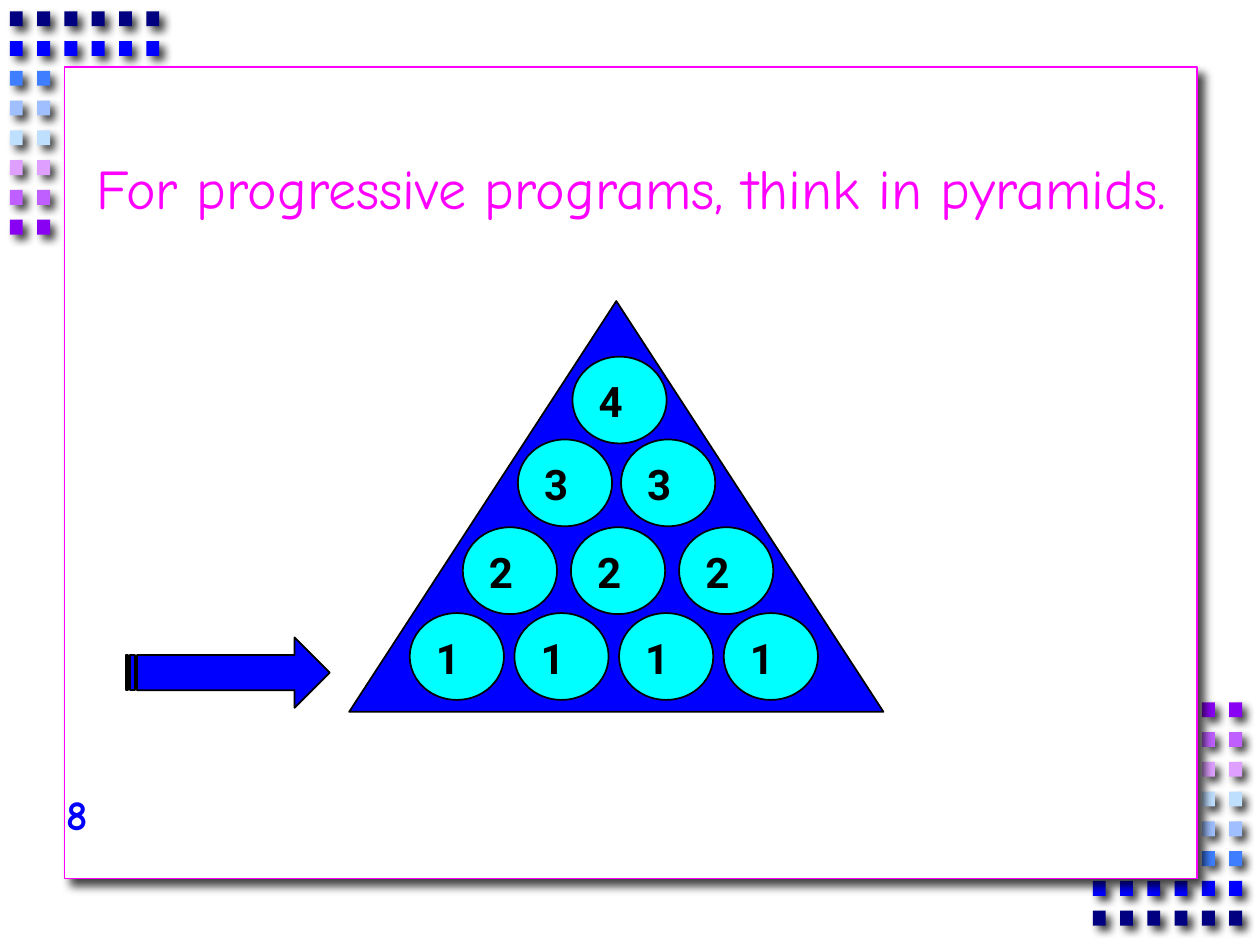
from lxml import etree
from pptx import Presentation
from pptx import util as u
from pptx.dml.color import RGBColor
from pptx.enum import shapes, text
from pptx.oxml.ns import qn

TITLE_FONT = "Comic Neue"
NUMBER_FONT = "Roboto"
BLUE, MAGENTA, CYAN, BLACK, WHITE = "0000FF", "FF00FF", "00FFFF", "000000", "FFFFFF"
DOT_COLOURS = ["000080", BLUE, "3F7FFF", "9FBFFF", "BFDFFF", "DF9FFF", "BF5FFF", "8901F3"]
DOT_COLUMNS = 6
DOT_PITCH = (0.55, 0.6)
DOT_SIZE = (0.26, 0.3)


def colour(hex_string):
    return RGBColor.from_string(hex_string)


def add_shape(slide, kind, box, fill, line=None):
    """Add a flat preset shape; box is left, top, width, height in cm."""
    shape = slide.shapes.add_shape(kind, *[u.Cm(length) for length in box])
    shape.shadow.inherit = False
    shape.fill.solid()
    shape.fill.fore_color.rgb = colour(fill)
    if line:
        shape.line.color.rgb = colour(line)
        shape.line.width = u.Pt(1)
    else:
        shape.line.fill.background()
    return shape


def add_shadow(shape, distance):
    """Cast a blurred black shadow down to the right; distance is in points."""
    effects = shape.element.spPr.find(qn("a:effectLst"))
    shadow = etree.SubElement(effects, qn("a:outerShdw"), blurRad=str(u.Pt(5)),
                              dist=str(u.Pt(distance)), dir="2700000",
                              algn="ctr", rotWithShape="0")
    black = etree.SubElement(shadow, qn("a:srgbClr"), val=BLACK)
    etree.SubElement(black, qn("a:alpha"), val="75000")


def format_runs(paragraph, font_name, size, bold=False):
    for run in paragraph.runs:
        run.font.name = font_name
        run.font.size = u.Pt(size)
        run.font.bold = bold


def add_dot_corner(slide, left, top, row_colours, outer_columns):
    """Draw an L of dots: full dark blue rows, other rows in outer_columns only."""
    for row, fill in enumerate(row_colours):
        full_row = fill in DOT_COLOURS[:2]
        for column in range(DOT_COLUMNS) if full_row else outer_columns:
            box = (left + column * DOT_PITCH[0], top + row * DOT_PITCH[1], *DOT_SIZE)
            dot = add_shape(slide, shapes.MSO_SHAPE.RECTANGLE, box, fill)
            add_shadow(dot, 4.2)


def add_frame(slide, box):
    frame = add_shape(slide, shapes.MSO_SHAPE.RECTANGLE, box, WHITE, MAGENTA)
    add_shadow(frame, 5.7)


def place_statement(slide, box, words):
    """Move the body placeholder in front of the frame and fill it."""
    body = slide.placeholders[1]
    body.left, body.top, body.width, body.height = [u.Cm(length) for length in box]
    body.element.getparent().append(body.element)
    body.text_frame.text = words
    body.text_frame.auto_size = text.MSO_AUTO_SIZE.NONE
    paragraph = body.text_frame.paragraphs[0]
    paragraph.alignment = text.PP_ALIGN.CENTER
    properties = paragraph._p.get_or_add_pPr()
    properties.set("marL", "0")
    properties.set("indent", "0")
    etree.SubElement(properties, qn("a:buNone"))
    format_runs(paragraph, TITLE_FONT, 32)
    paragraph.runs[0].font.color.rgb = colour(MAGENTA)


def add_pyramid(slide, box):
    left, top = box[:2]
    add_shape(slide, shapes.MSO_SHAPE.FLOWCHART_EXTRACT, box, BLUE, BLACK)
    # Label, first circle's offset from the box, distance between circles
    rows = [("4", 4.5, 1.12, 0), ("3", 3.4, 2.79, 2.08),
            ("2", 2.29, 4.56, 2.18), ("1", 1.22, 6.29, 2.11)]
    for count, (label, x, y, pitch) in enumerate(rows, start=1):
        for position in range(count):
            circle_box = (left + x + position * pitch, top + y, 1.9, 1.75)
            add_circle(slide, circle_box, label)


def add_circle(slide, box, label):
    circle = add_shape(slide, shapes.MSO_SHAPE.OVAL, box, CYAN, BLACK)
    circle.text_frame.text = label
    circle.text_frame.vertical_anchor = text.MSO_ANCHOR.TOP
    paragraph = circle.text_frame.paragraphs[0]
    paragraph.alignment = text.PP_ALIGN.LEFT
    format_runs(paragraph, NUMBER_FONT, 24, bold=True)
    paragraph.runs[0].font.color.rgb = colour(BLACK)


def add_page_number(slide, box, number):
    text_box = slide.shapes.add_textbox(*[u.Cm(length) for length in box])
    text_box.text_frame.word_wrap = True
    text_box.text_frame.auto_size = text.MSO_AUTO_SIZE.SHAPE_TO_FIT_TEXT
    text_box.text_frame.text = number
    paragraph = text_box.text_frame.paragraphs[0]
    format_runs(paragraph, TITLE_FONT, 24, bold=True)
    fill = paragraph.runs[0].font.fill
    fill.gradient()
    fill.gradient_angle = 315
    for stop, stop_colour in zip(fill.gradient_stops, (BLUE, MAGENTA)):
        stop.color.rgb = colour(stop_colour)


def main():
    presentation = Presentation()
    presentation.slide_width, presentation.slide_height = u.Cm(25.4), u.Cm(19.05)
    slide = presentation.slides.add_slide(presentation.slide_layouts[1])
    title = slide.shapes.title.element
    title.getparent().remove(title)

    add_dot_corner(slide, 0.2, 0.23, DOT_COLOURS, (0, 1))
    add_dot_corner(slide, 22.03, 14.16, DOT_COLOURS[::-1], (4, 5))
    add_frame(slide, (1.3, 1.35, 22.83, 16.36))
    place_statement(slide, (1.45, 2.97, 22.58, 14.07),
                    "For progressive programs, think in pyramids.")
    add_pyramid(slide, (7.04, 6.07, 10.77, 8.28))
    add_shape(slide, shapes.MSO_SHAPE.STRIPED_RIGHT_ARROW,
              (2.54, 12.85, 4.11, 1.42), BLUE, BLACK)
    add_page_number(slide, (1.09, 15.77, 2.26, 1.27), "8")
    presentation.save("out.pptx")


if __name__ == "__main__":
    main()
